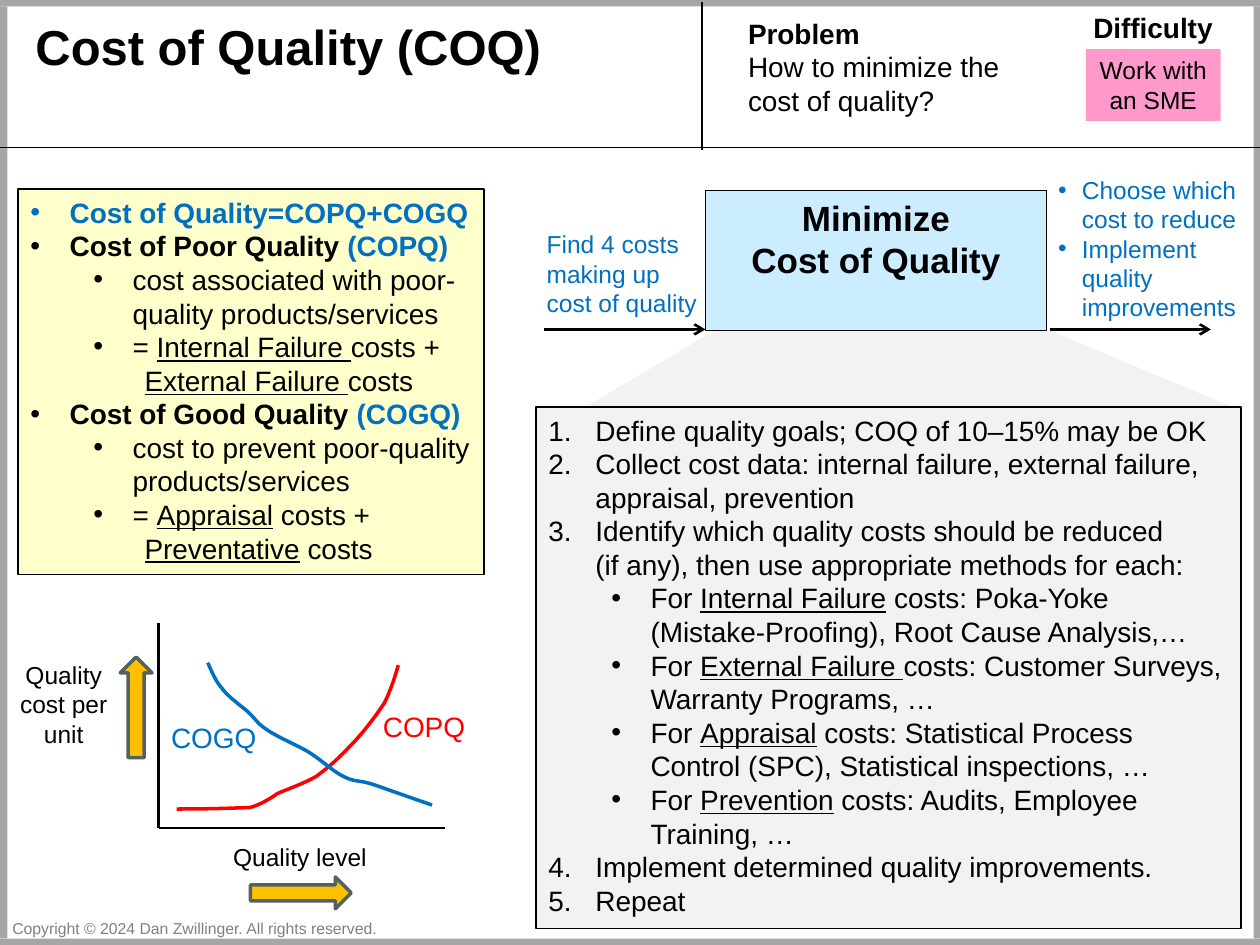
"""Build the Cost of Quality (COQ) summary slide."""
import pptx
import pptx.dml.color
import pptx.enum.shapes
import pptx.enum.text
import pptx.oxml
import pptx.oxml.ns
import pptx.util
from lxml import etree

Cm = pptx.util.Cm
Pt = pptx.util.Pt
RGB = pptx.dml.color.RGBColor.from_string
SHAPES = pptx.enum.shapes.MSO_SHAPE
LEFT = pptx.enum.text.PP_ALIGN.LEFT
CENTER = pptx.enum.text.PP_ALIGN.CENTER
TOP = pptx.enum.text.MSO_ANCHOR.TOP
qn = pptx.oxml.ns.qn

COLORS = {
    "black": "000000", "blue": "0070C0", "red": "FF0000", "gray": "808080",
    "frame": "A6A6A6", "panel": "F2F2F2", "sky": "CCECFF", "cream": "FFFFCC",
    "pink": "FF99CC", "gold": "FFC000", "slate": "526263",
}
LIST_STYLES = {
    "number": (0, 0.95, -0.95, "buAutoNum", {"type": "arabicPeriod"}),
    "topic": (0, 0.79, -0.79, "buChar", {"char": "•"}),
    "detail": (1, 2.06, -0.79, "buChar", {"char": "•"}),
    "continued": (1, 2.3, 0, "buNone", {}),
    "output": (0, 0.48, -0.48, "buChar", {"char": "•"}),
}


def write(frame, rows, size, color="black", bold=False, align=LEFT):
    """Write (style, text) rows; text between bars is blue in topics, underlined elsewhere."""
    frame.auto_size = pptx.enum.text.MSO_AUTO_SIZE.NONE
    frame.vertical_anchor = TOP
    for index, (style, text) in enumerate(rows):
        paragraph = frame.paragraphs[0] if index == 0 else frame.add_paragraph()
        paragraph.alignment = align
        paragraph.space_before = Pt(0)
        if style in LIST_STYLES:
            level, margin, indent, tag, attributes = LIST_STYLES[style]
            paragraph.level = level
            properties = paragraph._p.get_or_add_pPr()
            properties.set("marL", str(Cm(margin)))
            properties.set("indent", str(Cm(indent)))
            etree.SubElement(properties, qn("a:buFont"), typeface="Arial")
            etree.SubElement(properties, qn(f"a:{tag}"), attributes)
        for part, piece in enumerate(text.split("|")):
            for line, words in enumerate(piece.split("\v")):
                if line:
                    paragraph.add_line_break()
                if not words:
                    continue
                run = paragraph.add_run()
                run.text = words
                accent = part % 2 == 1
                run.font.name = "Arial"
                run.font.size = Pt(size)
                run.font.bold = style == "topic" or style == "heading" or bold
                run.font.underline = accent and style != "topic"
                run.font.color.rgb = RGB(COLORS["blue" if accent and style == "topic" else color])


def add_block(kind, box, fill, line=None, width=0.75):
    """Add a filled preset shape without shadow."""
    shape = slide.shapes.add_shape(kind, *map(Cm, box))
    shape.shadow.inherit = False
    shape.fill.solid()
    shape.fill.fore_color.rgb = RGB(COLORS[fill])
    if line:
        shape.line.color.rgb = RGB(COLORS[line])
        shape.line.width = Pt(width)
    else:
        shape.line.fill.background()
    return shape


presentation = pptx.Presentation()
presentation.slide_width = Cm(25.4)
presentation.slide_height = Cm(19.05)
slide = presentation.slides.add_slide(presentation.slide_layouts[3])
title, definitions, steps = slide.placeholders

backdrop = [
    add_block(SHAPES.RECTANGLE, box, "frame")
    for box in [(0, 0, 25.4, 0.13), (0, 18.92, 25.4, 0.13),
                (0, 0.13, 0.15, 18.79), (25.27, 0.13, 0.13, 18.79)]
]
funnel = add_block(SHAPES.ISOSCELES_TRIANGLE, (11.73, 5, 13.21, 3.25), "panel")
funnel.adjustments[0] = 0.415
for shape in backdrop + [funnel]:
    title._element.addprevious(shape._element)

definition_rows = [
    ("topic", "|Cost of Quality=COPQ+COGQ"),
    ("topic", "Cost of Poor Quality |(COPQ)"),
    ("detail", "cost associated with poor-quality products/services"),
    ("detail", "= |Internal Failure |costs +"),
    ("continued", "|External Failure |costs"),
    ("topic", "Cost of Good Quality |(COGQ)"),
    ("detail", "cost to prevent poor-quality products/services"),
    ("detail", "= |Appraisal| costs +"),
    ("continued", "|Preventative| costs"),
]
step_rows = [
    ("number", "Define quality goals; COQ of 10–15% may be OK"),
    ("number", "Collect cost data: internal failure, external failure, appraisal, prevention"),
    ("number", "Identify which quality costs should be reduced\v"
               "(if any), then use appropriate methods for each:"),
    ("detail", "For |Internal Failure| costs: Poka-Yoke (Mistake-Proofing), Root Cause Analysis,…"),
    ("detail", "For |External Failure |costs: Customer Surveys, Warranty Programs, …"),
    ("detail", "For |Appraisal| costs: Statistical Process Control (SPC), Statistical inspections, …"),
    ("detail", "For |Prevention| costs: Audits, Employee Training, …"),
    ("number", "Implement determined quality improvements."),
    ("number", "Repeat"),
]
for placeholder, box, rows, size, fill, line_width in [
    (title, (0.46, 0.2, 12.24, 1.45), [("heading", "Cost of Quality (COQ)")], 28, None, 0),
    (definitions, (0.36, 3.81, 9.4, 7.77), definition_rows, 16, "cream", 0.75),
    (steps, (10.8, 8.2, 14.22, 10.52), step_rows, 16, "panel", 1),
]:
    placeholder.left, placeholder.top, placeholder.width, placeholder.height = map(Cm, box)
    write(placeholder.text_frame, rows, size)
    if fill:
        placeholder.fill.solid()
        placeholder.fill.fore_color.rgb = RGB(COLORS[fill])
        placeholder.line.color.rgb = RGB(COLORS["black"])
        placeholder.line.width = Pt(line_width)

process = add_block(SHAPES.RECTANGLE, (14.22, 3.84, 6.88, 2.82), "sky", "black")
write(process.text_frame, [("", "Minimize"), ("", "Cost of Quality")], 20, bold=True, align=CENTER)
difficulty = add_block(SHAPES.RECTANGLE, (21.89, 0.99, 2.72, 1.45), "pink")
write(difficulty.text_frame, [("", "Work with an SME")], 14, align=CENTER)
add_block(SHAPES.RIGHT_ARROW, (5.05, 17.68, 2.03, 0.64), "gold", "slate", 2)
cost_arrow = add_block(SHAPES.RIGHT_ARROW, (1.73, 13.94, 2.03, 0.64), "gold", "slate", 2)
cost_arrow.rotation = 270

for ends, width, arrow in [
    ((0, 2.97, 25.4, 2.97), 0.75, False),
    ((14.15, 3.02, 14.15, 0.05), 0.75, False),
    ((10.97, 6.64, 14.22, 6.64), 1.5, True),
    ((21.16, 6.64, 24.41, 6.64), 1.5, True),
    ((3.2, 16.69, 3.2, 12.55), 1.5, False),
    ((3.2, 16.69, 8.97, 16.69), 1.5, False),
]:
    connector = slide.shapes.add_connector(
        pptx.enum.shapes.MSO_CONNECTOR.STRAIGHT, *map(Cm, ends))
    connector.line.color.rgb = RGB(COLORS["black"])
    connector.line.width = Pt(width)
    if arrow:
        etree.SubElement(connector.line._get_or_add_ln(), qn("a:tailEnd"), type="arrow")
    etree.SubElement(connector._element.spPr, qn("a:effectLst"))

curves = {
    "red": [(3.56, 16.31), (4.04, 16.31), (4.53, 16.3), (5.03, 16.28),
            (5.28, 16.23), (5.59, 16), (5.59, 16), (5.82, 15.9), (6.12, 15.8), (6.38, 15.65),
            (6.6, 15.49), (6.83, 15.29), (7.06, 15.04), (7.29, 14.81), (7.57, 14.45),
            (7.75, 14.17), (7.9, 13.89), (8.03, 13.41), (8.03, 13.41)],
    "blue": [(4.19, 13.36), (4.27, 13.54), (4.34, 13.72), (4.47, 13.87),
             (4.6, 14.05), (4.85, 14.22), (5, 14.35), (5.16, 14.5), (5.18, 14.58), (5.38, 14.71),
             (5.59, 14.86), (5.97, 15.01), (6.22, 15.16), (6.48, 15.32), (6.73, 15.57),
             (6.96, 15.67), (7.16, 15.77), (7.24, 15.72), (7.54, 15.82),
             (7.85, 15.93), (8.71, 16.23), (8.71, 16.23)],
}
for color, knots in curves.items():
    points = []
    for first in range(0, len(knots) - 1, 3):
        for step in range(1, 11):
            t = step / 10
            weights = ((1 - t) ** 3, 3 * t * (1 - t) ** 2, 3 * t * t * (1 - t), t ** 3)
            points.append(tuple(
                Cm(sum(weight * knot[axis] for weight, knot in zip(weights, knots[first:first + 4])))
                for axis in (0, 1)))
    builder = slide.shapes.build_freeform(*map(Cm, knots[0]))
    builder.add_line_segments(points, close=False)
    curve = builder.convert_to_shape()
    curve.shadow.inherit = False
    curve.fill.background()
    curve.line.color.rgb = RGB(COLORS[color])
    curve.line.width = Pt(2)

for box, rows, size, color, align, wrap in [
    ((14.83, 0.2, 6.65, 2.31), [("heading", "Problem"), ("", "How to minimize the cost of quality?")],
     16, "black", LEFT, True),
    ((21.79, 0.08, 2.92, 0.94), [("heading", "Difficulty")], 16, "black", LEFT, False),
    ((10.77, 4.5, 3.63, 2.06), [("", "Find 4 costs making up cost of quality")], 14, "blue", LEFT, True),
    ((21.08, 3.4, 4.32, 3.25), [("output", "Choose which cost to reduce"),
                                ("output", "Implement quality improvements")], 14, "blue", LEFT, True),
    ((0, 18.39, 7.98, 0.64), [("", "Copyright © 2024 Dan Zwillinger. All rights reserved.")],
     9, "gray", LEFT, False),
    ((4.45, 16.84, 3.23, 0.86), [("", "Quality level")], 14, "black", LEFT, False),
    ((0, 13.18, 2.57, 2.06), [("", "Quality cost per unit")], 14, "black", CENTER, True),
    ((3.2, 14.4, 2.26, 0.94), [("", "COGQ")], 16, "blue", LEFT, False),
    ((7.47, 14.17, 2.18, 0.94), [("", "COPQ")], 16, "red", LEFT, False),
]:
    text_box = slide.shapes.add_textbox(*map(Cm, box))
    write(text_box.text_frame, rows, size, color, align=align)
    text_box.text_frame.word_wrap = wrap

presentation.save("out.pptx")
